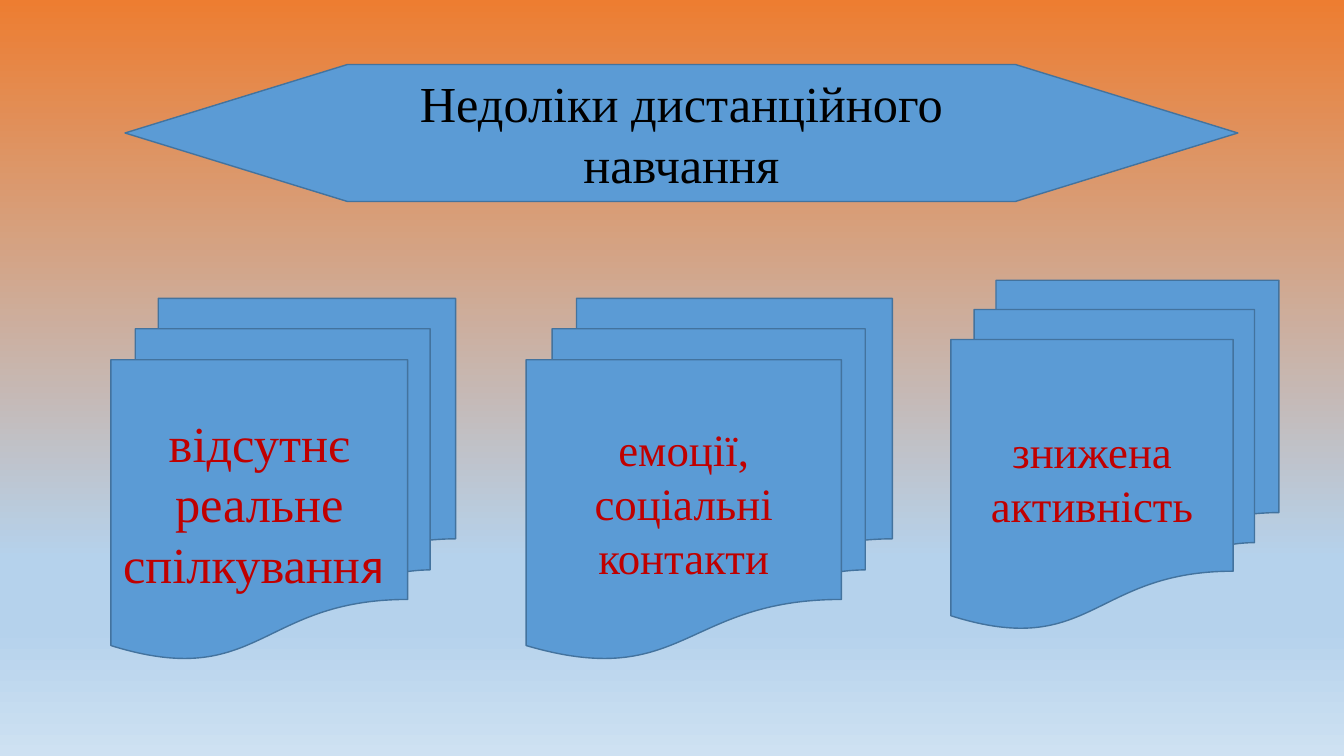
from lxml.etree import SubElement
from pptx import Presentation
from pptx.dml.color import RGBColor
from pptx.enum.shapes import MSO_SHAPE as SHAPE
from pptx.enum.text import MSO_ANCHOR as ANCHOR, MSO_AUTO_SIZE as AUTO_SIZE, PP_ALIGN as ALIGN
from pptx.oxml.ns import qn
from pptx.util import Inches, Pt

COLOURS = {
    "shape": "5B9BD5",
    "outline": "43739E",
    "title": "000000",
    "drawback": "C00000",
    "sunset": "ED7D31",
    "sky": "B5D2EC",
    "haze": "CEE1F2",
}
SERIF, SANS = "Times New Roman", "Calibri"
FRAME_FORMAT = {
    "word_wrap": True,
    "auto_size": AUTO_SIZE.NONE,
    "vertical_anchor": ANCHOR.MIDDLE,
    "margin_left": Inches(0.1),
    "margin_right": Inches(0.1),
    "margin_top": Inches(0.05),
    "margin_bottom": Inches(0.05),
}


def apply_format(target, values):
    for name, value in values.items():
        setattr(target, name, value)


class SlideBuilder:
    """Draws on one slide; every box is given in percent of the slide's size."""

    def __init__(self, presentation):
        self.width = presentation.slide_width
        self.height = presentation.slide_height
        self.slide = presentation.slides.add_slide(presentation.slide_layouts[5])

    def place(self, box):
        left, top, width, height = box
        return {
            "left": round(self.width * left / 100),
            "top": round(self.height * top / 100),
            "width": round(self.width * width / 100),
            "height": round(self.height * height / 100),
        }

    def background(self, stops):
        fill = self.slide.background.fill
        fill.gradient()
        fill.gradient_angle = 270
        stop_list = self.slide.element.find(".//" + qn("a:gsLst"))
        stop_list.clear()
        for percent, colour in stops:
            stop = SubElement(stop_list, qn("a:gs"), pos=str(percent * 1000))
            SubElement(stop, qn("a:srgbClr"), val=COLOURS[colour])

    def shape(self, kind, box):
        shape = self.slide.shapes.add_shape(kind, **self.place(box))
        shape.shadow.inherit = False
        shape.fill.solid()
        shape.fill.fore_color.rgb = RGBColor.from_string(COLOURS["shape"])
        shape.line.color.rgb = RGBColor.from_string(COLOURS["outline"])
        shape.line.width = Pt(1)
        return shape

    def text(self, shape, runs, size, colour):
        apply_format(shape.text_frame, FRAME_FORMAT)
        paragraph = shape.text_frame.paragraphs[0]
        paragraph.alignment = ALIGN.CENTER
        for words, font_name in runs:
            run = paragraph.add_run()
            run.text = words
            apply_format(run.font, {"name": font_name, "size": Pt(size)})
            run.font.color.rgb = RGBColor.from_string(COLOURS[colour])

    def title(self, words, box):
        self.shape(SHAPE.FLOWCHART_PREPARATION, box)
        # The title fills the hexagon between its two pointed fifths
        left, top, width, height = box
        placeholder = self.slide.shapes.title
        apply_format(placeholder, self.place((left + width / 5, top, width * 3 / 5, height)))
        self.text(placeholder, [(words, SERIF)], 36, "title")
        # Bring the title in front of the hexagon
        self.slide.shapes.element.append(placeholder.element)

    def drawback(self, runs, size, box):
        document = self.shape(SHAPE.FLOWCHART_MULTIDOCUMENT, box)
        self.text(document, runs, size, "drawback")


def main():
    presentation = Presentation()
    apply_format(presentation, {"slide_width": Inches(13.33), "slide_height": Inches(7.5)})
    builder = SlideBuilder(presentation)

    # Background and title
    builder.background([(0, "sunset"), (74, "sky"), (83, "sky"), (100, "haze")])
    builder.title("Недоліки дистанційного навчання", (9.3, 8.53, 82.8, 18.13))

    # Drawbacks, one stack of documents each
    drawbacks = [
        ([("відсутнє реальне спілкуванн", SERIF), ("я ", SANS)], 36, (8.25, 39.47, 25.65, 47.73)),
        ([("емоції, соціальні контакти", SERIF)], 32, (39.15, 39.47, 27.25, 47.73)),
        ([("знижена активність", SERIF)], 32, (70.75, 37.07, 24.4, 46.13)),
    ]
    for runs, size, box in drawbacks:
        builder.drawback(runs, size, box)

    presentation.save("out.pptx")


if __name__ == "__main__":
    main()
